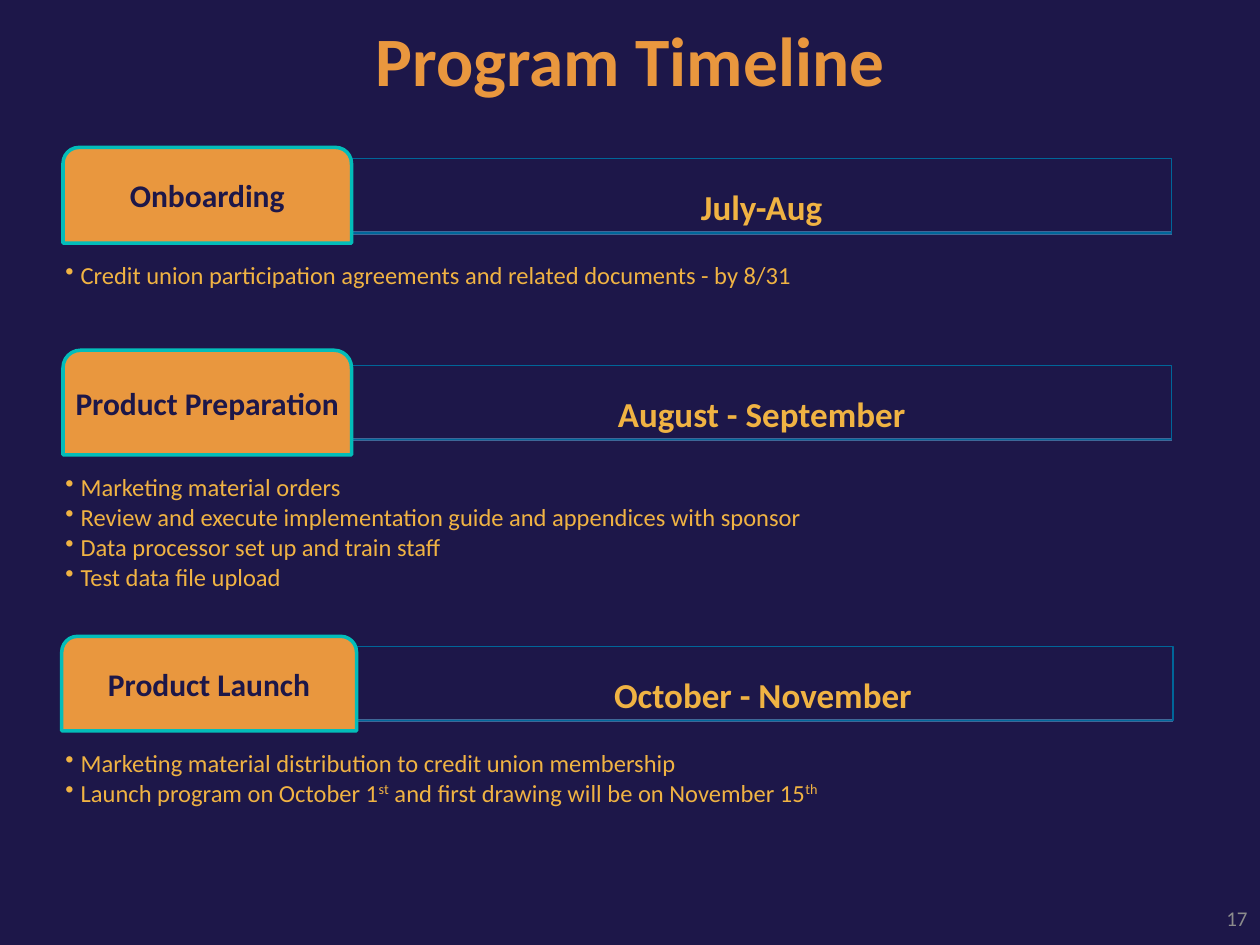
from dataclasses import dataclass

from lxml import etree
from pptx import Presentation
from pptx.dml.color import RGBColor
from pptx.enum.shapes import MSO_CONNECTOR, MSO_SHAPE
from pptx.enum.text import MSO_ANCHOR, PP_ALIGN
from pptx.oxml.ns import qn
from pptx.util import Inches, Pt

LEFT, CENTER, RIGHT = PP_ALIGN.LEFT, PP_ALIGN.CENTER, PP_ALIGN.RIGHT
TOP, MIDDLE, BOTTOM = MSO_ANCHOR.TOP, MSO_ANCHOR.MIDDLE, MSO_ANCHOR.BOTTOM
RECTANGLE, TAB = MSO_SHAPE.RECTANGLE, MSO_SHAPE.ROUND_2_SAME_RECTANGLE
STRAIGHT = MSO_CONNECTOR.STRAIGHT


@dataclass(frozen=True)
class Theme:
    font: str = "Calibri"
    navy: RGBColor = RGBColor(0x1D, 0x17, 0x49)
    orange: RGBColor = RGBColor(0xE9, 0x97, 0x3E)
    gold: RGBColor = RGBColor(0xF0, 0xB3, 0x43)
    teal: RGBColor = RGBColor(0x03, 0xBD, 0xB9)
    blue: RGBColor = RGBColor(0x00, 0x66, 0x99)
    steel: RGBColor = RGBColor(0x3F, 0x67, 0x97)
    gray: RGBColor = RGBColor(0x8C, 0x8C, 0x8C)
    title_size: float = 39.6
    date_size: float = 20
    phase_size: float = 18
    body_size: float = 14
    number_size: float = 12


theme = Theme()


def set_frame(shape, anchor, side, top, bottom):
    """Prepare the text frame of a shape and return it."""
    text_frame = shape.text_frame
    text_frame.word_wrap = True
    text_frame.vertical_anchor = anchor
    text_frame.margin_left = text_frame.margin_right = Inches(side)
    text_frame.margin_top, text_frame.margin_bottom = Inches(top), Inches(bottom)
    return text_frame


def style(paragraph, size, color, bold=False, align=LEFT, spacing=0.9):
    """Format a paragraph and all its runs."""
    paragraph.alignment = align
    paragraph.line_spacing = spacing
    for run in paragraph.runs:
        run.font.name = theme.font
        run.font.size = Pt(size)
        run.font.bold = bold
        run.font.color.rgb = color


presentation = Presentation()
presentation.slide_width, presentation.slide_height = Inches(10), Inches(7.5)
slide = presentation.slides.add_slide(presentation.slide_layouts[6])
slide.background.fill.solid()
slide.background.fill.fore_color.rgb = theme.navy
shapes = slide.shapes

# Title and slide number
for text, box, size, color, bold, align in [
    ("Program Timeline", (0.5, 0.08, 9, 0.77), theme.title_size, theme.orange, True, CENTER),
    ("17", (7.67, 7.09, 2.33, 0.4), theme.number_size, theme.gray, False, RIGHT),
]:
    text_box = shapes.add_textbox(*map(Inches, box))
    text_frame = set_frame(text_box, MIDDLE, 0.1, 0.05, 0.05)
    text_frame.text = text
    style(text_frame.paragraphs[0], size, color, bold, align, 1.0)

# Phases: name, tab box, date, date box left and top, details top and height, details
# Each detail is a list of pieces; every second piece is superscript
phases = [
    ("Onboarding", (0.5, 1.17, 2.29, 0.76), "July-Aug", 2.79, 1.26, 1.93, 0.82,
     [["Credit union participation agreements and related documents - by 8/31"]]),
    ("Product Preparation", (0.5, 2.78, 2.29, 0.83), "August - September", 2.79, 2.9, 3.61, 1.41,
     [["Marketing material orders"],
      ["Review and execute implementation guide and appendices with sponsor"],
      ["Data processor set up and train staff"],
      ["Test data file upload"]]),
    ("Product Launch", (0.49, 5.05, 2.34, 0.75), "October - November", 2.8, 5.13, 5.8, 0.58,
     [["Marketing material distribution to credit union membership"],
      ["Launch program on October 1", "st", " and first drawing will be on November 15", "th"]]),
]
date_width, date_height = 6.51, 0.59

for name, tab_box, date, date_left, date_top, details_top, details_height, details in phases:
    # Rule under the date
    rule_y = Inches(date_top + date_height)
    rule_right = date_left + date_width
    rule = shapes.add_connector(STRAIGHT, Inches(rule_right - 8.8), rule_y,
                                Inches(rule_right), rule_y)
    rule.line.color.rgb = theme.steel
    rule.line.width = Pt(2)
    etree.SubElement(rule.line._get_or_add_ln().getparent(), qn("a:effectLst"))

    # Date box
    date_shape = shapes.add_shape(RECTANGLE, Inches(date_left), Inches(date_top),
                                  Inches(date_width), Inches(date_height))
    date_shape.shadow.inherit = False
    date_shape.fill.background()
    date_shape.line.color.rgb = theme.blue
    date_shape.line.width = Pt(0.75)
    text_frame = set_frame(date_shape, BOTTOM, 0.04, 0.04, 0.04)
    text_frame.text = date
    style(text_frame.paragraphs[0], theme.date_size, theme.gold, True, CENTER)

    # Phase tab
    tab = shapes.add_shape(TAB, *map(Inches, tab_box))
    tab.shadow.inherit = False
    tab.adjustments[0], tab.adjustments[1] = 0.167, 0
    tab.fill.solid()
    tab.fill.fore_color.rgb = theme.orange
    tab.line.color.rgb = theme.teal
    tab.line.width = Pt(2)
    text_frame = set_frame(tab, MIDDLE, 0.02, 0.04, 0.04)
    text_frame.text = name
    style(text_frame.paragraphs[0], theme.phase_size, theme.navy, True, CENTER)

    # Bulleted details
    details_box = shapes.add_textbox(Inches(0.5), Inches(details_top),
                                     Inches(8.8), Inches(details_height))
    text_frame = set_frame(details_box, TOP, 0.02, 0.16, 0.02)
    for index, pieces in enumerate(details):
        paragraph = text_frame.add_paragraph() if index else text_frame.paragraphs[0]
        properties = paragraph._p.get_or_add_pPr()
        properties.set("marL", str(Inches(0.12)))
        properties.set("indent", str(-Inches(0.12)))
        etree.SubElement(properties, qn("a:buChar")).set("char", "•")
        for position, piece in enumerate(pieces):
            run = paragraph.add_run()
            run.text = piece
            if position % 2:
                run.font._element.set("baseline", "30000")
        style(paragraph, theme.body_size, theme.gold)
        paragraph.space_after = Pt(2)

presentation.save("out.pptx")
